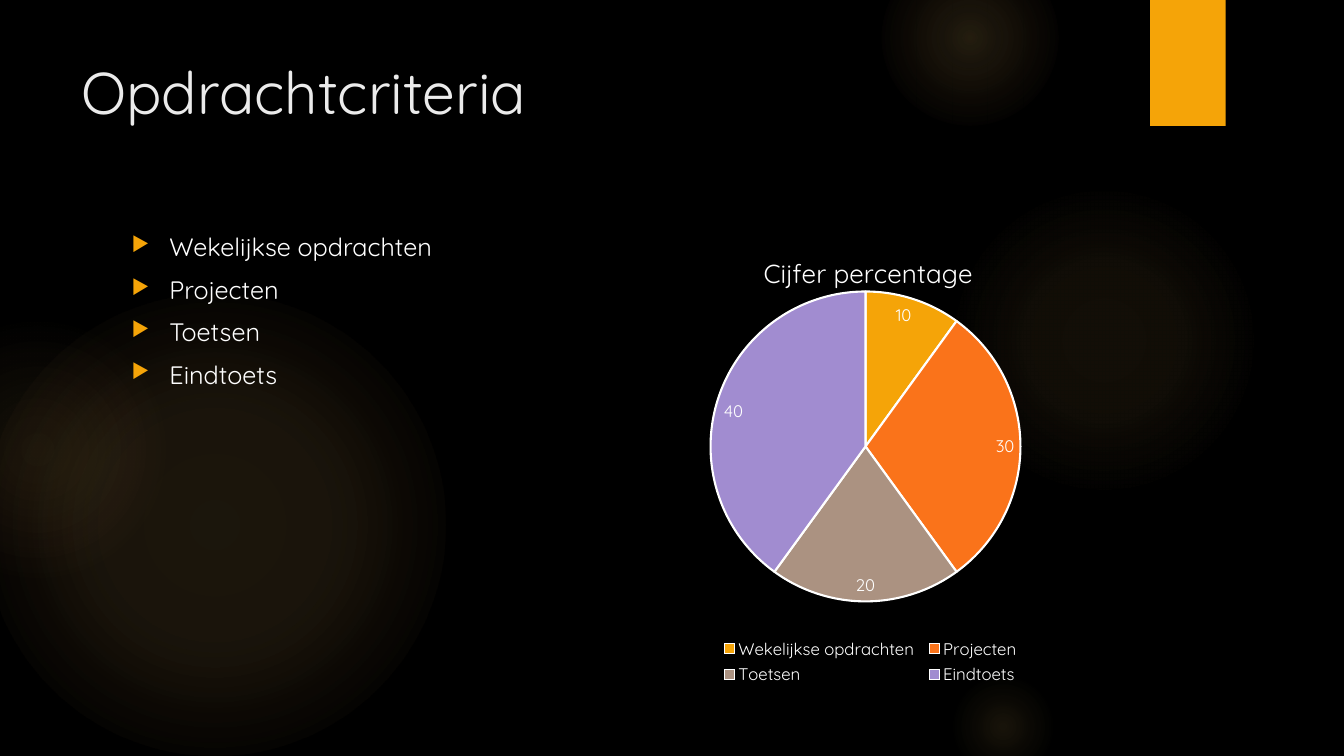
import pptx
import pptx.chart.data
import pptx.dml.color
import pptx.enum.chart
import pptx.enum.shapes
import pptx.enum.text
import pptx.oxml
import pptx.oxml.ns
import pptx.util

Pt = pptx.util.Pt
RGBColor = pptx.dml.color.RGBColor
qn = pptx.oxml.ns.qn

FONT = "Quicksand"
BLACK = RGBColor(0x00, 0x00, 0x00)
WHITE = RGBColor(0xFF, 0xFF, 0xFF)
TITLE_GREY = RGBColor(0xEB, 0xEB, 0xEB)
AMBER = RGBColor(0xF5, 0xA4, 0x08)
ORANGE = RGBColor(0xFA, 0x73, 0x1A)
TAUPE = RGBColor(0xAB, 0x92, 0x81)
LILAC = RGBColor(0xA1, 0x8C, 0xD0)
GLOW = RGBColor(0xFA, 0xC9, 0x6A)
GLOW_PINK = RGBColor(0xF5, 0x9B, 0x74)

TITLE = "Opdrachtcriteria"
CHART_TITLE = "Cijfer percentage"
CRITERIA = [
    ("Wekelijkse opdrachten", 10, AMBER),
    ("Projecten", 30, ORANGE),
    ("Toetsen", 20, TAUPE),
    ("Eindtoets", 40, LILAC),
]
# left, top, diameter, then (stop %, colour, opacity %)
GLOWS = [
    (-12, 210, 330, [(0, GLOW, 11), (36, GLOW, 10), (75, GLOW, 0)]),
    (-66, 228, 186, [(0, GLOW, 8), (36, GLOW, 5), (71, GLOW_PINK, 0)]),
    (677.5, 132, 222, [(0, GLOW, 7), (36, GLOW, 6), (69, GLOW, 0)]),
    (630, -36, 126, [(0, GLOW, 14), (36, GLOW, 7), (73, GLOW, 0)]),
    (677.5, 480, 78, [(0, GLOW, 10), (31, GLOW, 5), (66, GLOW, 0)]),
]
COLUMN_TOP, COLUMN_WIDTH, COLUMN_HEIGHT = 162, 346.5, 330.5
LIST_LEFT, CHART_LEFT = 87, 445
BULLET_INDENT = 27


def style_font(font, size, color=WHITE):
    font.name = FONT
    font.size = Pt(size)
    font.bold = False
    font.color.rgb = color


def add_plain_shape(slide, kind, left, top, width, height):
    shape = slide.shapes.add_shape(kind, Pt(left), Pt(top), Pt(width), Pt(height))
    shape.shadow.inherit = False
    shape.line.fill.background()
    return shape


def add_glow(slide, left, top, diameter, stops):
    shape = add_plain_shape(slide, pptx.enum.shapes.MSO_SHAPE.OVAL, left, top, diameter, diameter)
    stop_xml = "".join(
        f'<a:gs pos="{position * 1000}"><a:srgbClr val="{color}">'
        f'<a:alpha val="{opacity * 1000}"/></a:srgbClr></a:gs>'
        for position, color, opacity in stops
    )
    gradient = pptx.oxml.parse_xml(
        f'<a:gradFill {pptx.oxml.ns.nsdecls("a")} rotWithShape="1"><a:gsLst>{stop_xml}</a:gsLst>'
        '<a:path path="circle"><a:fillToRect l="50000" t="50000" r="50000" b="50000"/></a:path>'
        "</a:gradFill>"
    )
    shape._element.spPr.find(qn("a:prstGeom")).addnext(gradient)


def add_title(slide):
    title = slide.shapes.title
    title.left, title.top, title.width, title.height = Pt(51), Pt(36), Pt(741), Pt(110)
    title.text_frame.vertical_anchor = pptx.enum.text.MSO_ANCHOR.TOP
    paragraph = title.text_frame.paragraphs[0]
    paragraph.alignment = pptx.enum.text.PP_ALIGN.LEFT
    run = paragraph.add_run()
    run.text = TITLE
    style_font(run.font, 42, TITLE_GREY)


def add_bullet(paragraph):
    properties = paragraph._p.get_or_add_pPr()
    properties.set("marL", str(Pt(BULLET_INDENT)))
    properties.set("indent", str(-Pt(BULLET_INDENT)))
    for xml in (
        f'<a:buClr {{}}><a:srgbClr val="{AMBER}"/></a:buClr>',
        '<a:buSzPct {} val="80000"/>',
        '<a:buChar {} char="▶"/>',
    ):
        properties.append(pptx.oxml.parse_xml(xml.format(pptx.oxml.ns.nsdecls("a"))))


def add_criteria_list(slide):
    box = slide.shapes.add_textbox(
        Pt(LIST_LEFT), Pt(COLUMN_TOP), Pt(COLUMN_WIDTH), Pt(COLUMN_HEIGHT)
    )
    frame = box.text_frame
    frame.word_wrap = True
    for index, (name, _, _) in enumerate(CRITERIA):
        paragraph = frame.add_paragraph() if index else frame.paragraphs[0]
        paragraph.space_before = Pt(2.7)
        paragraph.space_after = Pt(6)
        add_bullet(paragraph)
        run = paragraph.add_run()
        run.text = name
        style_font(run.font, 18)


def set_layout(element, inner=False, **fractions):
    """Place a chart part by fractions of the chart area."""
    target = '<c:layoutTarget val="inner"/>' if inner else ""
    modes = '<c:xMode val="edge"/><c:yMode val="edge"/>'
    values = "".join(f'<c:{key} val="{value}"/>' for key, value in fractions.items())
    layout = pptx.oxml.parse_xml(
        f'<c:layout {pptx.oxml.ns.nsdecls("c")}><c:manualLayout>{target}{modes}{values}'
        "</c:manualLayout></c:layout>"
    )
    for old in element.findall(qn("c:layout")):
        element.remove(old)
    before = element.find(qn("c:tx"))
    if before is None:
        before = element.find(qn("c:legendPos"))
    if before is None:
        element.insert(0, layout)
    else:
        before.addnext(layout)


def add_grade_chart(slide):
    data = pptx.chart.data.CategoryChartData()
    data.categories = [name for name, _, _ in CRITERIA]
    data.add_series("Series 1", [value for _, value, _ in CRITERIA])
    chart = slide.shapes.add_chart(
        pptx.enum.chart.XL_CHART_TYPE.PIE,
        Pt(CHART_LEFT), Pt(COLUMN_TOP), Pt(COLUMN_WIDTH), Pt(COLUMN_HEIGHT), data,
    ).chart
    style_font(chart.font, 10)

    chart.has_title = True
    run = chart.chart_title.text_frame.paragraphs[0].add_run()
    run.text = CHART_TITLE
    style_font(run.font, 18.6)
    set_layout(chart.chart_title._element, x=0.28, y=0.05)

    chart.has_legend = True
    chart.legend.position = pptx.enum.chart.XL_LEGEND_POSITION.BOTTOM
    chart.legend.include_in_layout = False
    style_font(chart.legend.font, 12)
    set_layout(chart.legend._element, x=0.19, y=0.88, w=0.64, h=0.12)

    plot = chart.plots[0]
    plot.vary_by_categories = True
    set_layout(chart._chartSpace.chart.plotArea, inner=True, x=0.18, y=0.14, w=0.64, h=0.67)
    plot.has_data_labels = True
    labels = plot.data_labels
    labels.show_value = True
    labels.show_percentage = False
    labels.position = pptx.enum.chart.XL_LABEL_POSITION.INSIDE_END
    style_font(labels.font, 12)
    for index, (_, _, color) in enumerate(CRITERIA):
        point = plot.series[0].points[index]
        point.format.fill.solid()
        point.format.fill.fore_color.rgb = color
        point.format.line.color.rgb = WHITE
        point.format.line.width = Pt(1.5)


def main():
    presentation = pptx.Presentation()
    presentation.slide_width, presentation.slide_height = Pt(960), Pt(540)
    slide = presentation.slides.add_slide(presentation.slide_layouts[5])
    slide.background.fill.solid()
    slide.background.fill.fore_color.rgb = BLACK
    for glow in GLOWS:
        add_glow(slide, *glow)
    tab = add_plain_shape(slide, pptx.enum.shapes.MSO_SHAPE.RECTANGLE, 821.5, 0, 54, 90)
    tab.fill.solid()
    tab.fill.fore_color.rgb = AMBER
    add_title(slide)
    add_criteria_list(slide)
    add_grade_chart(slide)
    presentation.save("out.pptx")


if __name__ == "__main__":
    main()
